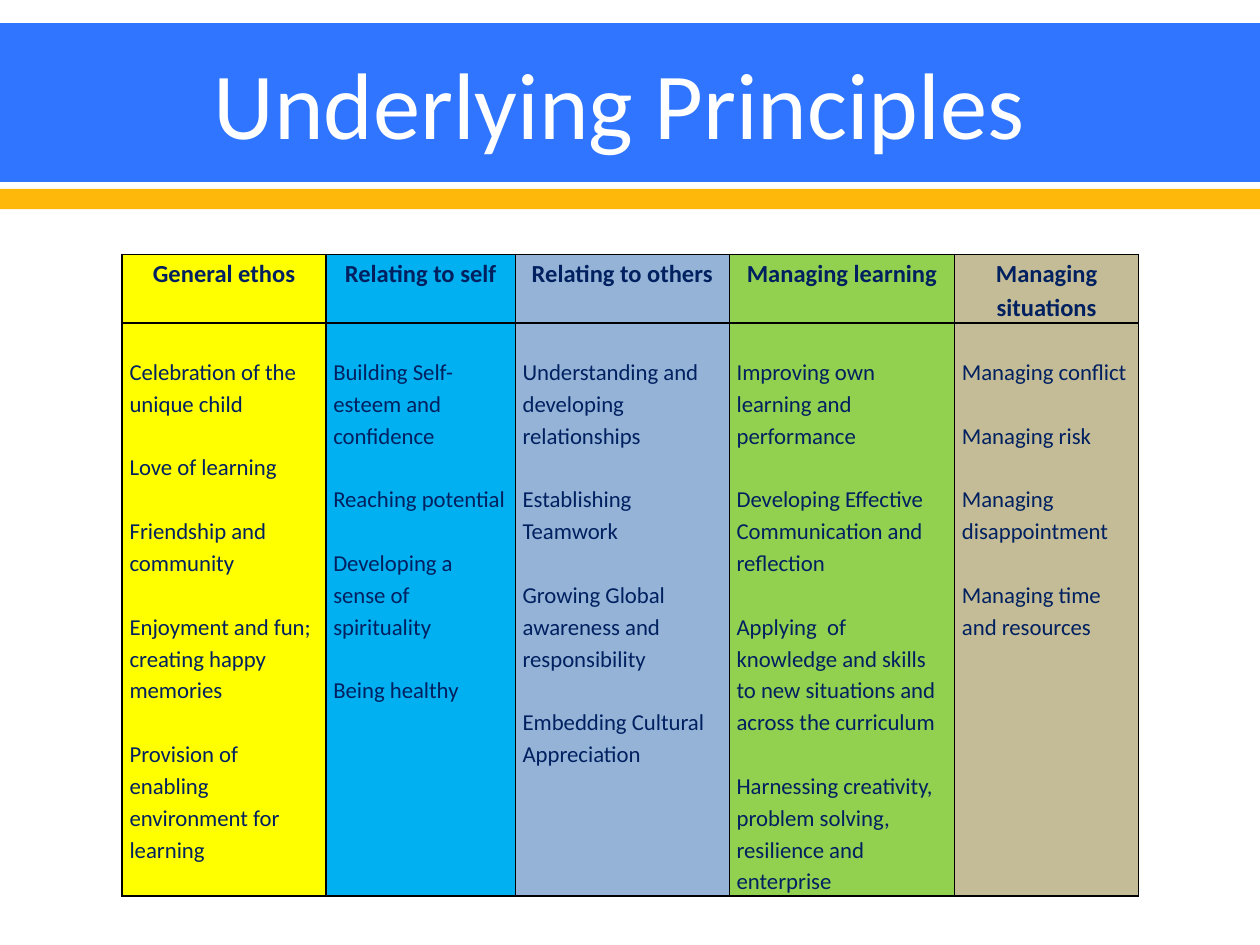
import pptx
import pptx.dml.color
import pptx.enum.shapes
import pptx.enum.text
import pptx.oxml
import pptx.oxml.ns
import pptx.util
from lxml import etree

Pt = pptx.util.Pt
RGB = pptx.dml.color.RGBColor
ALIGN = pptx.enum.text.PP_ALIGN

BLUE = RGB(0x2F, 0x75, 0xFF)
ORANGE = RGB(0xFE, 0xB8, 0x0A)
WHITE = RGB(0xFF, 0xFF, 0xFF)
NAVY = RGB(0x00, 0x20, 0x60)
BLACK = RGB(0x00, 0x00, 0x00)
YELLOW = RGB(0xFF, 0xFF, 0x00)
SKY = RGB(0x00, 0xB0, 0xF0)
STEEL = RGB(0x95, 0xB3, 0xD7)
GREEN = RGB(0x92, 0xD0, 0x50)
TAN = RGB(0xC4, 0xBC, 0x96)

FONT = "Calibri"
LINE_GAP = Pt(18.2)
HEADER_HEIGHT, BODY_HEIGHT = Pt(39.2), Pt(327.5)

# heading, fill, width, principles
COLUMNS = [
    ("General ethos", YELLOW, 116.4, [
        "Celebration of the unique child",
        "Love of learning",
        "Friendship and community",
        "Enjoyment and fun; creating happy memories",
        "Provision of enabling environment for learning"]),
    ("Relating to self", SKY, 108.2, [
        "Building Self-esteem and confidence",
        "Reaching potential",
        "Developing a sense of spirituality",
        "Being healthy"]),
    ("Relating to others", STEEL, 122.3, [
        "Understanding and developing relationships",
        "Establishing Teamwork",
        "Growing Global awareness and responsibility",
        "Embedding Cultural Appreciation"]),
    ("Managing learning", GREEN, 128.8, [
        "Improving own learning and performance",
        "Developing Effective Communication and reflection",
        "Applying  of knowledge and skills to new situations "
        "and across the curriculum",
        "Harnessing creativity, problem solving, resilience and enterprise"]),
    ("Managing situations", TAN, 105.1, [
        "Managing conflict",
        "Managing risk",
        "Managing disappointment",
        "Managing time and resources"]),
]


def add_band(s, top, height, color):
    """Draw a bar across the full slide width."""
    sp = s.shapes.add_shape(pptx.enum.shapes.MSO_SHAPE.RECTANGLE,
                            0, Pt(top), Pt(720), Pt(height))
    sp.shadow.inherit = False
    sp.fill.solid()
    sp.fill.fore_color.rgb = color
    sp.line.fill.background()


def format_text(p, size, color, bold=False):
    for r in p.runs:
        r.font.name = FONT
        r.font.size = Pt(size)
        r.font.bold = bold
        r.font.color.rgb = color


def add_title(s, text):
    tf = s.shapes.add_textbox(Pt(36), Pt(14.4), Pt(648), Pt(87.84)).text_frame
    tf.word_wrap = True
    tf.vertical_anchor = pptx.enum.text.MSO_ANCHOR.MIDDLE
    tf.text = text
    p = tf.paragraphs[0]
    p.alignment = ALIGN.CENTER
    format_text(p, 54, WHITE)


def set_borders(cell, color, width):
    tc_pr = cell._tc.get_or_add_tcPr()
    for i, side in enumerate(("lnL", "lnR", "lnT", "lnB")):
        ln = pptx.oxml.parse_xml(
            f'<a:{side} {pptx.oxml.ns.nsdecls("a")} w="{Pt(width)}">'
            f'<a:solidFill><a:srgbClr val="{color}"/></a:solidFill></a:{side}>')
        tc_pr.insert(i, ln)


def fill_cell(cell, lines, color, size, bold=False, align=ALIGN.LEFT):
    cell.margin_left = cell.margin_right = Pt(4.2)
    cell.margin_top = cell.margin_bottom = 0
    cell.fill.solid()
    cell.fill.fore_color.rgb = color
    set_borders(cell, BLACK, 1)
    tf = cell.text_frame
    tf.text = "\n".join(lines)
    for i, p in enumerate(tf.paragraphs):
        p.alignment = align
        p.line_spacing = 1.15
        p.space_before = LINE_GAP if i else 0
        format_text(p, size, NAVY, bold)


def add_principles_table(s):
    width = Pt(sum(column[2] for column in COLUMNS))
    table = s.shapes.add_table(2, len(COLUMNS), Pt(69.84), Pt(145.3), width,
                               HEADER_HEIGHT + BODY_HEIGHT).table
    table.first_row = table.horz_banding = False
    table.rows[0].height = HEADER_HEIGHT
    table.rows[1].height = BODY_HEIGHT
    for i, (heading, color, column_width, principles) in enumerate(COLUMNS):
        table.columns[i].width = Pt(column_width)
        fill_cell(table.cell(0, i), [heading], color, 14, True, ALIGN.CENTER)
        body = table.cell(1, i)
        fill_cell(body, principles, color, 13)
        body.margin_top = LINE_GAP


def main():
    prs = pptx.Presentation()
    prs.slide_width, prs.slide_height = Pt(720), Pt(540)
    s = prs.slides.add_slide(prs.slide_layouts[6])
    add_band(s, 13.2, 90.7, BLUE)
    add_band(s, 108, 11.5, ORANGE)
    add_title(s, "Underlying Principles ")
    add_principles_table(s)
    prs.save("out.pptx")


if __name__ == "__main__":
    main()
